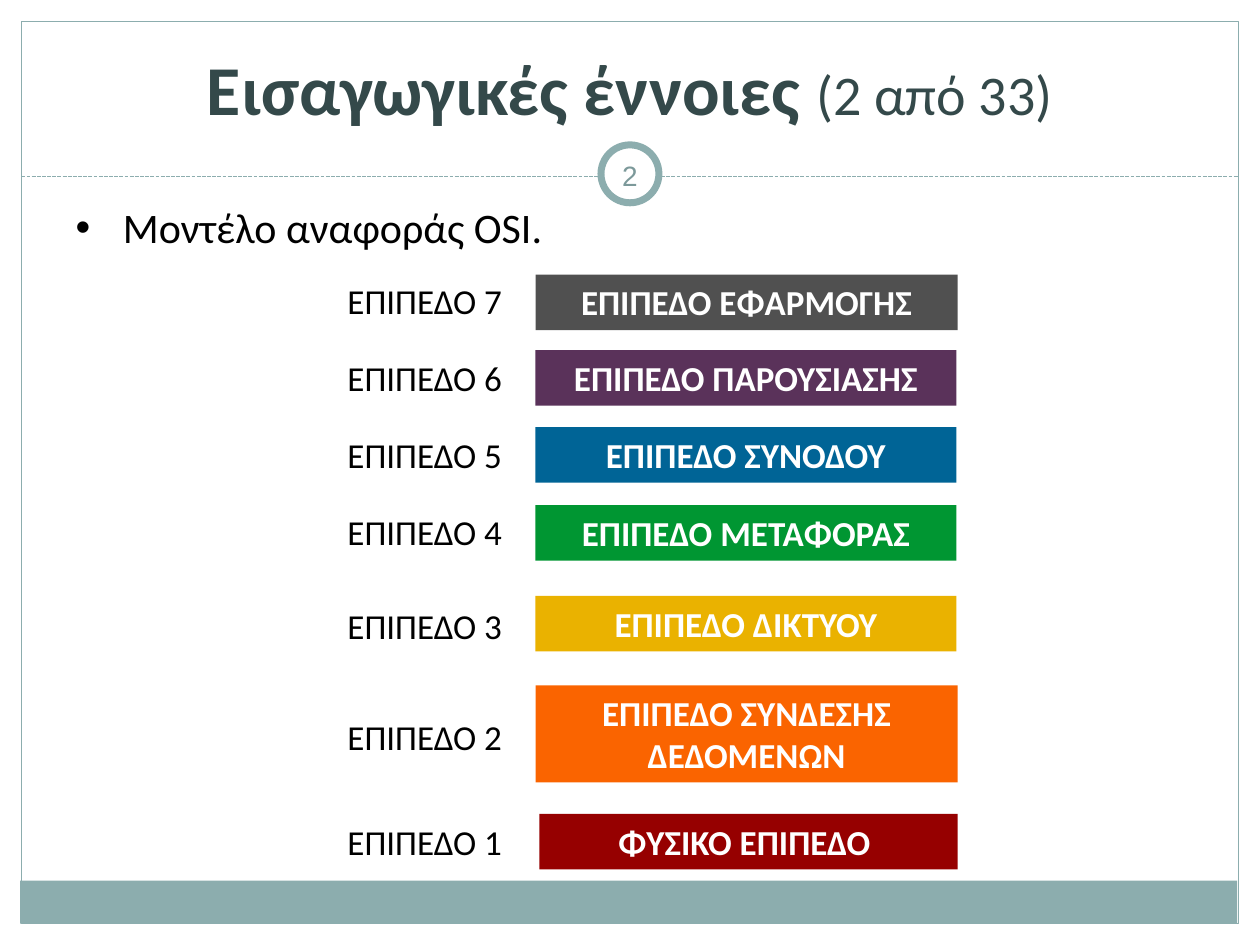
"""Build the slide that lists the seven layers of the OSI reference model."""
from dataclasses import dataclass

from lxml.etree import SubElement
from pptx import Presentation
from pptx.dml.color import RGBColor
from pptx.enum.dml import MSO_LINE
from pptx.enum.shapes import MSO_CONNECTOR, MSO_SHAPE
from pptx.enum.text import MSO_ANCHOR, MSO_AUTO_SIZE, PP_ALIGN
from pptx.oxml.ns import qn
from pptx.util import Inches, Pt


@dataclass(frozen=True)
class Theme:
    accent: str = "8CADAE"
    title: str = "34494A"
    number: str = "7C999A"
    text: str = "000000"
    white: str = "FFFFFF"
    font: str = "Calibri"
    number_font: str = "Arial"
    title_size: int = 40
    count_size: int = 32
    body_size: int = 24
    layer_size: int = 20
    number_size: int = 16


theme = Theme()


def style(font, size, color, bold=False, name=theme.font):
    font.size, font.bold, font.name = Pt(size), bold, name
    font.color.rgb = RGBColor.from_string(color)


def add_block(preset, box, fill=None, line=None, weight=0.75):
    block = slide.shapes.add_shape(preset, *map(Inches, box))
    block.shadow.inherit = False
    if fill:
        block.fill.solid()
        block.fill.fore_color.rgb = RGBColor.from_string(fill)
    else:
        block.fill.background()
    if line:
        block.line.color.rgb = RGBColor.from_string(line)
        block.line.width = Pt(weight)
    else:
        block.line.fill.background()
    return block


deck = Presentation()
deck.slide_width, deck.slide_height = Inches(10), Inches(7.5)
slide = deck.slides.add_slide(deck.slide_layouts[1])

add_block(MSO_SHAPE.RECTANGLE, (0.16, 6.99, 9.66, 0.34), fill=theme.accent)
add_block(MSO_SHAPE.RECTANGLE, (0.17, 0.17, 9.66, 7.16), line=theme.accent)

divider = slide.shapes.add_connector(
    MSO_CONNECTOR.STRAIGHT, Inches(0.17), Inches(1.4), Inches(9.83), Inches(1.4))
divider.line.color.rgb = RGBColor.from_string(theme.accent)
divider.line.width = Pt(0.75)
divider.line.dash_style = MSO_LINE.SQUARE_DOT
SubElement(divider.element.spPr, qn("a:effectLst"))

add_block(MSO_SHAPE.OVAL, (4.77, 1.15, 0.46, 0.46), theme.white, theme.accent, 4)
page = slide.shapes.add_textbox(
    Inches(4.75), Inches(1.15), Inches(0.5), Inches(0.48)).text_frame
page.word_wrap = True
page.vertical_anchor = MSO_ANCHOR.MIDDLE
page.margin_left = page.margin_right = Inches(0.05)
page.margin_top = page.margin_bottom = Inches(0.05)
page.text = "2"
page.paragraphs[0].alignment = PP_ALIGN.CENTER
style(page.paragraphs[0].font, theme.number_size, theme.number, name=theme.number_font)

title = slide.shapes.title
title.left, title.top, title.width, title.height = map(Inches, (0.5, 0.2, 9, 0.99))
title.text_frame.vertical_anchor = MSO_ANCHOR.MIDDLE
heading = title.text_frame.paragraphs[0]
heading.alignment = PP_ALIGN.CENTER
for wording, size, bold in (("Εισαγωγικές έννοιες ", theme.title_size, True),
                            ("(2 από 33)", theme.count_size, False)):
    run = heading.add_run()
    run.text = wording
    style(run.font, size, theme.title, bold)

body = slide.placeholders[1]
body.left, body.top, body.width, body.height = map(Inches, (0.5, 1.55, 9, 5.35))
body.text_frame.text = "Μοντέλο αναφοράς OSI."
style(body.text_frame.paragraphs[0].font, theme.body_size, theme.text)

layers = (
    ("ΕΠΙΠΕΔΟ ΕΦΑΡΜΟΓΗΣ", "505050", 2.17, (4.25, 2.18, 3.35, 0.44)),
    ("ΕΠΙΠΕΔΟ ΠΑΡΟΥΣΙΑΣΗΣ", "5A325A", 2.78, (4.25, 2.78, 3.34, 0.44)),
    ("ΕΠΙΠΕΔΟ ΣΥΝΟΔΟΥ", "006496", 3.39, (4.25, 3.39, 3.34, 0.44)),
    ("ΕΠΙΠΕΔΟ ΜΕΤΑΦΟΡΑΣ", "009632", 4, (4.25, 4.01, 3.34, 0.44)),
    ("ΕΠΙΠΕΔΟ ΔΙΚΤΥΟΥ", "EAB200", 4.75, (4.25, 4.73, 3.34, 0.44)),
    ("ΕΠΙΠΕΔΟ ΣΥΝΔΕΣΗΣ ΔΕΔΟΜΕΝΩΝ", "FA6400", 5.63, (4.25, 5.44, 3.35, 0.77)),
    ("ΦΥΣΙΚΟ ΕΠΙΠΕΔΟ ", "960000", 6.46, (4.28, 6.46, 3.32, 0.44)),
)
for index, (layer, color, label_top, box) in enumerate(layers):
    band = add_block(MSO_SHAPE.RECTANGLE, box, fill=color).text_frame
    band.word_wrap = True
    band.auto_size = MSO_AUTO_SIZE.SHAPE_TO_FIT_TEXT
    band.vertical_anchor = MSO_ANCHOR.TOP
    band.text = layer
    band.paragraphs[0].alignment = PP_ALIGN.CENTER
    style(band.paragraphs[0].font, theme.layer_size, theme.white, True)

    label = slide.shapes.add_textbox(
        Inches(2.66), Inches(label_top), Inches(1.54), Inches(0.49)).text_frame
    label.word_wrap = False
    label.auto_size = MSO_AUTO_SIZE.SHAPE_TO_FIT_TEXT
    label.text = f"ΕΠΙΠΕΔΟ {len(layers) - index}"
    style(label.paragraphs[0].font, theme.layer_size, theme.text)

deck.save("out.pptx")
